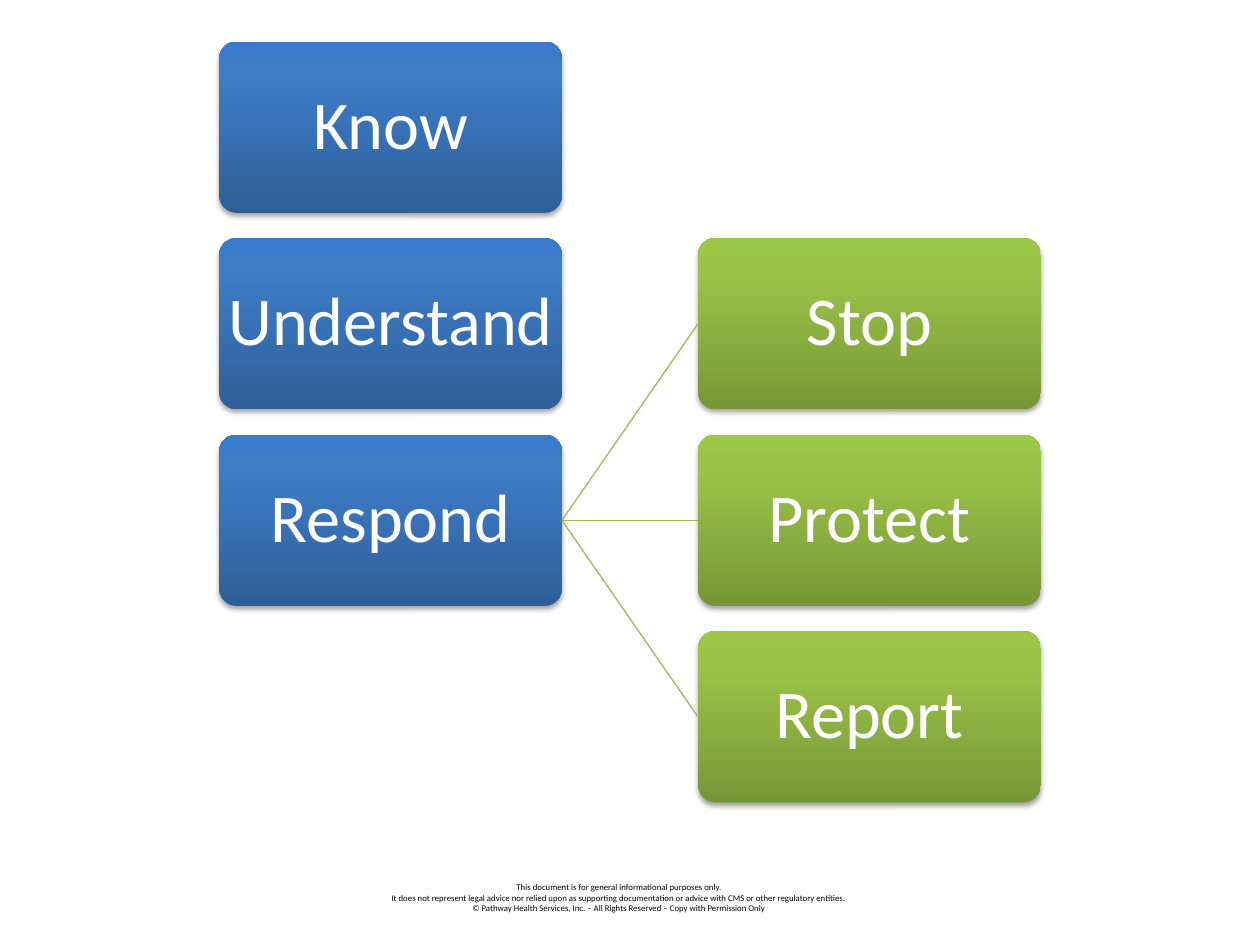
from dataclasses import dataclass

from lxml.etree import SubElement
from pptx import Presentation
from pptx.dml.color import RGBColor
from pptx.enum.shapes import MSO_CONNECTOR, MSO_SHAPE
from pptx.enum.text import MSO_ANCHOR, PP_ALIGN
from pptx.oxml.ns import qn
from pptx.util import Inches, Pt

WHITE = RGBColor(0xFF, 0xFF, 0xFF)
BLACK = RGBColor(0, 0, 0)
LINK = RGBColor(0x9B, 0xBB, 0x59)
BLUES = (RGBColor(0x2F, 0x5F, 0x99), RGBColor(0x3D, 0x7C, 0xC7), RGBColor(0x3A, 0x7C, 0xCB))
GREENS = (RGBColor(0x77, 0x97, 0x37), RGBColor(0x9B, 0xC3, 0x48), RGBColor(0x9D, 0xC7, 0x46))
STOPS = (0, 80, 100)

FONT = "Calibri"
LEFT, TOP = 1.74, 0.33
BOX_W, BOX_H = 2.72, 1.36
COL_STEP, ROW_STEP = 3.8, 1.56
LEFT_SITE, RIGHT_SITE = 1, 3

FOOTER = (
    "This document is for general informational purposes only.",
    "It does not represent legal advice nor relied upon as supporting documentation "
    "or advice with CMS or other regulatory entities.",
    "© Pathway Health Services, Inc. – All Rights Reserved – Copy with Permission Only",
)


@dataclass(frozen=True)
class Step:
    text: str
    col: int
    row: int
    colors: tuple[RGBColor, ...]


STEPS = (
    Step("Know", 0, 0, BLUES),
    Step("Understand", 0, 1, BLUES),
    Step("Respond", 0, 2, BLUES),
    Step("Stop", 1, 1, GREENS),
    Step("Protect", 1, 2, GREENS),
    Step("Report", 1, 3, GREENS),
)


def add_color(parent, color: RGBColor):
    return SubElement(parent, qn("a:srgbClr"), val=str(color))


def set_gradient(sp, colors: tuple[RGBColor, ...]) -> None:
    sp.fill.gradient()
    sp.fill.gradient_angle = 90
    stops = sp._element.spPr.find(".//" + qn("a:gsLst"))
    for gs in list(stops):
        stops.remove(gs)
    for pos, color in zip(STOPS, colors):
        add_color(SubElement(stops, qn("a:gs"), pos=str(pos * 1000)), color)


def set_shadow(sp) -> None:
    sp.shadow.inherit = False
    effects = sp._element.spPr.find(qn("a:effectLst"))
    shadow = SubElement(effects, qn("a:outerShdw"), blurRad=str(Pt(3.1)),
                        dist=str(Pt(1.8)), dir="5400000", rotWithShape="0")
    SubElement(add_color(shadow, BLACK), qn("a:alpha"), val="35000")


def add_step(s, step: Step):
    sp = s.shapes.add_shape(
        MSO_SHAPE.ROUNDED_RECTANGLE,
        Inches(LEFT + step.col * COL_STEP), Inches(TOP + step.row * ROW_STEP),
        Inches(BOX_W), Inches(BOX_H))
    sp.adjustments[0] = 0.1
    set_gradient(sp, step.colors)
    sp.line.fill.background()
    set_shadow(sp)
    tf = sp.text_frame
    tf.word_wrap = False
    tf.vertical_anchor = MSO_ANCHOR.MIDDLE
    tf.margin_left = tf.margin_right = tf.margin_top = tf.margin_bottom = Inches(0.03)
    p = tf.paragraphs[0]
    p.text = step.text
    p.alignment = PP_ALIGN.CENTER
    p.line_spacing = 0.9
    p.font.name, p.font.size, p.font.color.rgb = FONT, Pt(39), WHITE
    return sp


def add_link(s, start, end) -> None:
    line = s.shapes.add_connector(MSO_CONNECTOR.STRAIGHT, 0, 0, 0, 0)
    line.begin_connect(start, RIGHT_SITE)
    line.end_connect(end, LEFT_SITE)
    line.line.color.rgb = LINK
    line.line.width = Pt(0.75)
    SubElement(line._element.spPr, qn("a:effectLst"))


def add_footer(s) -> None:
    tf = s.shapes.add_textbox(Inches(2.75), Inches(6.95), Inches(4.33), Inches(0.35)).text_frame
    tf.word_wrap = True
    tf.text = "\n".join(FOOTER)
    for p in tf.paragraphs:
        p.alignment = PP_ALIGN.CENTER
        p.font.name, p.font.size, p.font.color.rgb = FONT, Pt(5), BLACK


def main() -> None:
    prs = Presentation()
    prs.slide_width, prs.slide_height = Inches(10), Inches(7.5)
    s = prs.slides.add_slide(prs.slide_layouts[6])
    add_footer(s)
    boxes = {step.text: add_step(s, step) for step in STEPS}
    for action in ("Stop", "Protect", "Report"):
        add_link(s, boxes["Respond"], boxes[action])
    prs.save("out.pptx")


if __name__ == "__main__":
    main()
